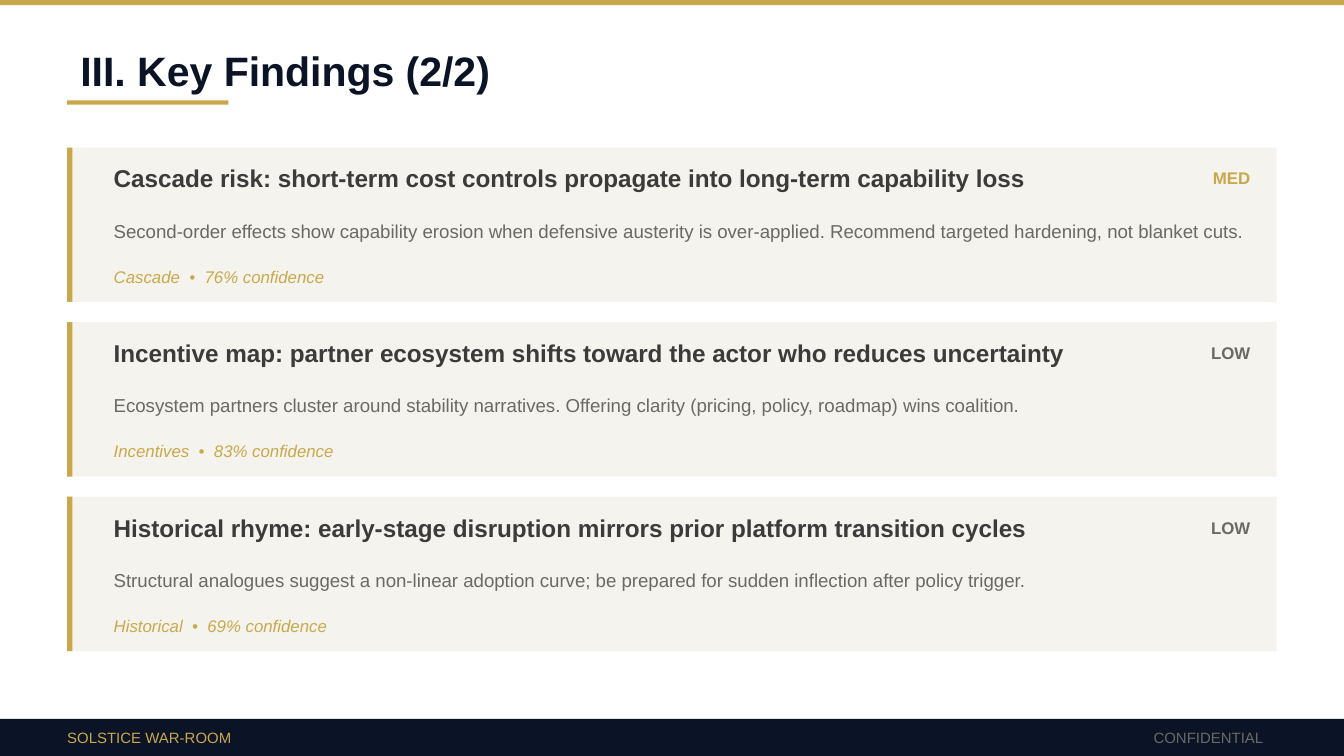
"""Build the second key findings slide."""
from dataclasses import dataclass
from typing import Any, NamedTuple

from pptx import Presentation
from pptx.dml.color import RGBColor as Rgb
from pptx.enum.shapes import MSO_AUTO_SHAPE_TYPE as Preset
from pptx.enum.text import MSO_VERTICAL_ANCHOR as Anchor, PP_PARAGRAPH_ALIGNMENT as Align
from pptx.slide import Slide
from pptx.util import Cm, Pt


@dataclass(frozen=True)
class Theme:
    """Hold the colours, font and type sizes of the slide."""
    gold: Rgb = Rgb(0xC9, 0xA8, 0x4C)
    navy: Rgb = Rgb(0x0B, 0x14, 0x26)
    cream: Rgb = Rgb(0xF5, 0xF3, 0xED)
    ink: Rgb = Rgb(0x3D, 0x3B, 0x39)
    grey: Rgb = Rgb(0x6B, 0x69, 0x66)
    font: str = "Arial"
    title: float = 22
    headline: float = 13
    body: float = 10
    tag: float = 9
    footer: float = 8


class Box(NamedTuple):
    """Give a position and size in centimetres."""
    left: float
    top: float
    width: float
    height: float


@dataclass(frozen=True)
class Finding:
    """Describe one finding card."""
    headline: str
    severity: str
    detail: str
    lens: str
    confidence: int


THEME = Theme()
SEVERITY_COLOURS = {"MED": THEME.gold, "LOW": THEME.grey}
SLIDE_WIDTH, SLIDE_HEIGHT = 25.4, 14.29
MARGIN, CONTENT_WIDTH = 1.27, 22.86
FOOTER_TOP, FOOTER_HEIGHT = 13.59, 0.7
RULE = 0.1
FIRST_CARD_TOP, CARD_HEIGHT, CARD_PITCH = 2.79, 2.92, 3.3
CARD_TEXT_LEFT = 1.9

FINDINGS = [
    Finding(
        "Cascade risk: short-term cost controls propagate into long-term capability loss",
        "MED",
        "Second-order effects show capability erosion when defensive austerity is "
        "over-applied. Recommend targeted hardening, not blanket cuts.",
        "Cascade", 76),
    Finding(
        "Incentive map: partner ecosystem shifts toward the actor who reduces uncertainty",
        "LOW",
        "Ecosystem partners cluster around stability narratives. Offering clarity "
        "(pricing, policy, roadmap) wins coalition.",
        "Incentives", 83),
    Finding(
        "Historical rhyme: early-stage disruption mirrors prior platform transition cycles",
        "LOW",
        "Structural analogues suggest a non-linear adoption curve; be prepared for "
        "sudden inflection after policy trigger.",
        "Historical", 69),
]


def add_block(slide: Slide, box: Box, colour: Rgb) -> None:
    """Draw a flat filled rectangle."""
    block = slide.shapes.add_shape(Preset.RECTANGLE, *map(Cm, box))
    block.shadow.inherit = False
    block.fill.solid()
    block.fill.fore_color.rgb = colour
    block.line.fill.background()


def add_text(slide: Slide, box: Box, wording: str, size: float, colour: Rgb,
             align: Align = Align.LEFT, spacing: float = 1.0, **styles: Any) -> None:
    """Write one vertically centred paragraph."""
    frame = slide.shapes.add_textbox(*map(Cm, box)).text_frame
    frame.word_wrap = True
    frame.vertical_anchor = Anchor.MIDDLE
    paragraph = frame.paragraphs[0]
    paragraph.alignment = align
    paragraph.line_spacing = spacing
    run = paragraph.add_run()
    run.text = wording
    for attribute, value in {"name": THEME.font, "size": Pt(size), **styles}.items():
        setattr(run.font, attribute, value)
    run.font.color.rgb = colour


def add_finding(slide: Slide, finding: Finding, top: float) -> None:
    """Draw one finding card with its accent and four texts."""
    add_block(slide, Box(MARGIN, top, CONTENT_WIDTH, CARD_HEIGHT), THEME.cream)
    add_block(slide, Box(MARGIN, top, RULE, CARD_HEIGHT), THEME.gold)
    add_text(slide, Box(CARD_TEXT_LEFT, top + 0.2, 19.05, 0.76), finding.headline,
             THEME.headline, THEME.ink, bold=True)
    add_text(slide, Box(21.59, top + 0.2, 2.29, 0.76), finding.severity,
             THEME.tag, SEVERITY_COLOURS[finding.severity], Align.RIGHT, bold=True)
    add_text(slide, Box(CARD_TEXT_LEFT, top + 1.02, 22.1, 1.02), finding.detail,
             THEME.body, THEME.grey, spacing=1.2)
    add_text(slide, Box(CARD_TEXT_LEFT, top + 2.16, 21.59, 0.56),
             f"{finding.lens}  •  {finding.confidence}% confidence",
             THEME.tag, THEME.gold, italic=True)


def add_frame(slide: Slide) -> None:
    """Draw the top rule, footer and title."""
    add_block(slide, Box(0, 0, SLIDE_WIDTH, RULE), THEME.gold)
    add_block(slide, Box(0, FOOTER_TOP, SLIDE_WIDTH, FOOTER_HEIGHT), THEME.navy)
    add_text(slide, Box(1.02, FOOTER_TOP, 10.16, FOOTER_HEIGHT), "SOLSTICE WAR-ROOM",
             THEME.footer, THEME.gold)
    add_text(slide, Box(16.51, FOOTER_TOP, 7.62, FOOTER_HEIGHT), "CONFIDENTIAL",
             THEME.footer, THEME.grey, Align.RIGHT)
    add_text(slide, Box(MARGIN, 0.76, CONTENT_WIDTH, 1.14), "III. Key Findings (2/2)",
             THEME.title, THEME.navy, bold=True)
    add_block(slide, Box(MARGIN, 1.9, 3.05, 0.08), THEME.gold)


def main() -> None:
    """Build and save the presentation."""
    deck = Presentation()
    deck.slide_width, deck.slide_height = Cm(SLIDE_WIDTH), Cm(SLIDE_HEIGHT)
    slide = deck.slides.add_slide(deck.slide_layouts[6])
    add_frame(slide)
    for index, finding in enumerate(FINDINGS):
        add_finding(slide, finding, FIRST_CARD_TOP + index * CARD_PITCH)
    deck.save("out.pptx")


if __name__ == "__main__":
    main()
